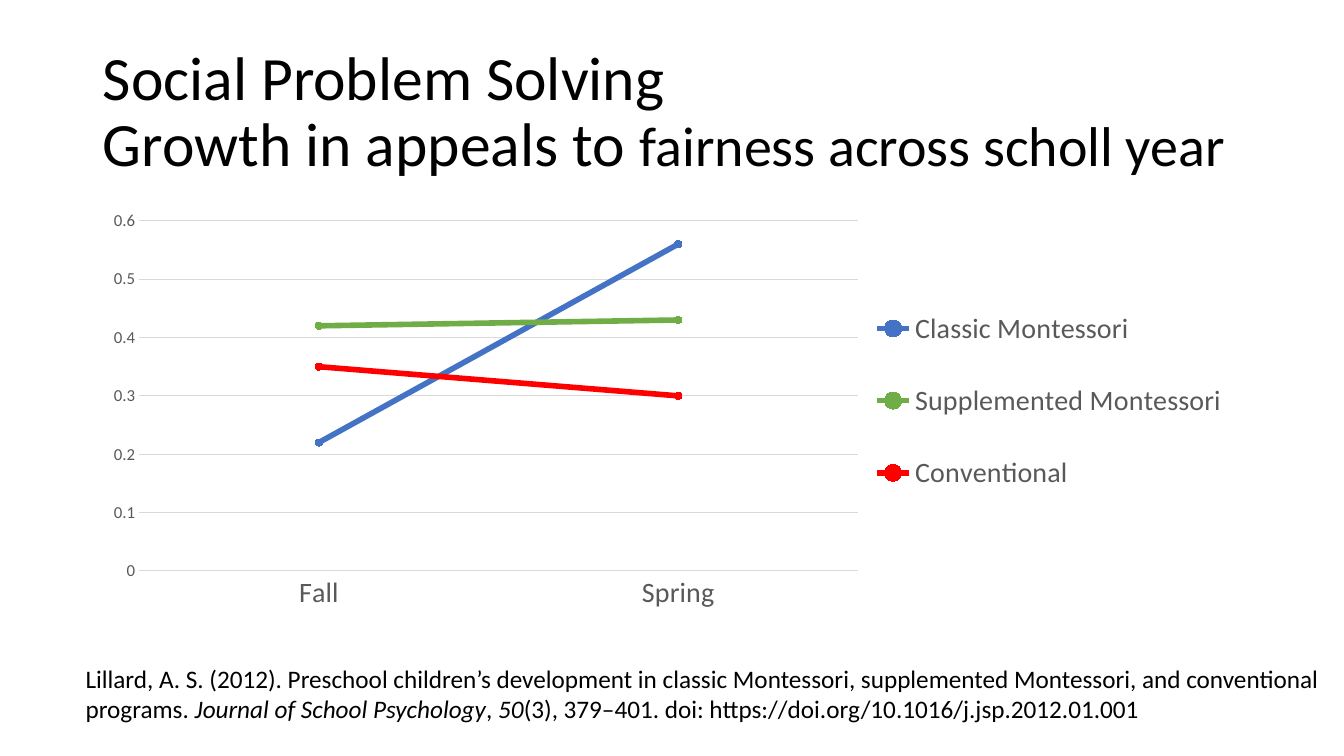
from lxml import etree
from pptx import Presentation
from pptx.chart import data as chart_data
from pptx.dml.color import RGBColor
from pptx.enum import chart as ce, text as te
from pptx.oxml import parse_xml
from pptx.util import Inches, Pt

# Content
FONT, BLACK, GREY, GRID = "Calibri", "000000", "595959", "D9D9D9"
TITLE = [[("Social Problem Solving", {"size": 44})],
         [("Growth in appeals to ", {"size": 44}),
          ("fairness across scholl year", {"size": 40})]]
SEASONS = ["Fall", "Spring"]
PROGRAMS = [
    ("Classic Montessori", [0.22, 0.56], "4472C4"),
    ("Supplemented Montessori", [0.42, 0.43], "70AD47"),
    ("Conventional", [0.35, 0.3], "FF0000"),
]
PLAIN, ITALIC = {"size": 18}, {"size": 18, "italic": True}
CITATION = [
    [("Lillard, A. S. (2012). Preschool children’s development in classic "
      "Montessori, supplemented Montessori, and conventional", PLAIN)],
    [("programs. ", PLAIN), ("Journal of School Psychology", ITALIC),
     (", ", PLAIN), ("50", ITALIC),
     ("(3), 379–401. doi: https://doi.org/10.1016/j.jsp.2012.01.001", PLAIN)],
]

# Places: left, top, width, height in inches; layouts as chart fractions
TITLE_BOX = (0.92, 0.4, 11.5, 1.45)
CHART_BOX = (0.92, 2, 11.5, 4.76)
CITATION_BOX = (0.75, 6.53, 12.58, 1.01)
PLOT_LAYOUT = (0.04, 0.04, 0.62, 0.73)
LEGEND_LAYOUT = (0.66, 0.15, 0.33, 0.53)
CHART_NS = "http://schemas.openxmlformats.org/drawingml/2006/chart"


def rgb(value):
    return RGBColor.from_string(value)


def style(font, size, color=BLACK, **extra):
    settings = {"name": FONT, "size": Pt(size), **extra}
    for key, value in settings.items():
        setattr(font, key, value)
    font.color.rgb = rgb(color)


def add_runs(paragraph, runs):
    for words, settings in runs:
        run = paragraph.add_run()
        run.text = words
        style(run.font, **settings)


def draw_line(line, color, width):
    line.color.rgb = rgb(color)
    line.width = Pt(width)


def layout_xml(box, inner=False):
    target = '<c:layoutTarget val="inner"/>' if inner else ""
    modes = "".join(f'<c:{side}Mode val="edge"/>' for side in "xy")
    sizes = "".join(f'<c:{side} val="{part}"/>' for side, part in zip("xywh", box))
    return parse_xml(f'<c:layout xmlns:c="{CHART_NS}"><c:manualLayout>'
                     f"{target}{modes}{sizes}</c:manualLayout></c:layout>")


def add_title(slide):
    title = slide.shapes.title
    title.left, title.top, title.width, title.height = map(Inches, TITLE_BOX)
    frame = title.text_frame
    frame.word_wrap = True
    frame.auto_size = te.MSO_AUTO_SIZE.NONE
    frame.vertical_anchor = te.MSO_ANCHOR.MIDDLE
    heading = frame.paragraphs[0]
    heading.alignment = te.PP_ALIGN.LEFT
    heading.line_spacing = 0.9
    for number, runs in enumerate(TITLE):
        if number:
            heading.add_line_break()
        add_runs(heading, runs)


def add_growth_chart(slide):
    growth = chart_data.CategoryChartData()
    growth.categories = SEASONS
    for name, scores, _ in PROGRAMS:
        growth.add_series(name, scores)
    chart = slide.shapes.add_chart(
        ce.XL_CHART_TYPE.LINE_MARKERS, *map(Inches, CHART_BOX), growth).chart
    style(chart.font, 10)
    chart.has_title = False

    # Lines and markers
    plot = chart.plots[0]
    plot.vary_by_categories = False
    for program, (_, _, color) in zip(plot.series, PROGRAMS):
        program.smooth = False
        draw_line(program.format.line, color, 4)
        marker = program.marker
        marker.style, marker.size = ce.XL_MARKER_STYLE.CIRCLE, 5
        marker.format.fill.solid()
        marker.format.fill.fore_color.rgb = rgb(color)
        draw_line(marker.format.line, color, 0.75)

    # Axes
    seasons, scores = chart.category_axis, chart.value_axis
    for axis, size in ((seasons, 20), (scores, 12)):
        axis.major_tick_mark = axis.minor_tick_mark = ce.XL_TICK_MARK.NONE
        style(axis.tick_labels.font, size, GREY)
    draw_line(seasons.format.line, GRID, 0.75)
    scores.format.line.fill.background()
    scores.minimum_scale, scores.maximum_scale, scores.major_unit = 0, 0.6, 0.1
    scores.has_major_gridlines = True
    draw_line(scores.major_gridlines.format.line, GRID, 0.75)

    # Legend and manual layouts
    chart.has_legend = True
    legend = chart.legend
    legend.position = ce.XL_LEGEND_POSITION.BOTTOM
    legend.include_in_layout = False
    style(legend.font, 20, GREY)
    plot_area = chart.element.find(f".//{{{CHART_NS}}}plotArea")
    legend_part = chart.element.find(f".//{{{CHART_NS}}}legend")
    for part in (plot_area, legend_part):
        for old in part.findall(f"{{{CHART_NS}}}layout"):
            part.remove(old)
    plot_area.insert(0, layout_xml(PLOT_LAYOUT, inner=True))
    position = legend_part.find(f"{{{CHART_NS}}}legendPos")
    position.addnext(layout_xml(LEGEND_LAYOUT))


def add_citation(slide):
    frame = slide.shapes.add_textbox(*map(Inches, CITATION_BOX)).text_frame
    frame.word_wrap = False
    frame.auto_size = te.MSO_AUTO_SIZE.SHAPE_TO_FIT_TEXT
    for number, runs in enumerate(CITATION):
        add_runs(frame.add_paragraph() if number else frame.paragraphs[0], runs)


def main():
    deck = Presentation()
    deck.slide_width, deck.slide_height = Inches(13.33), Inches(7.5)
    slide = deck.slides.add_slide(deck.slide_layouts[5])
    add_title(slide)
    add_growth_chart(slide)
    add_citation(slide)
    deck.save("out.pptx")


if __name__ == "__main__":
    main()
